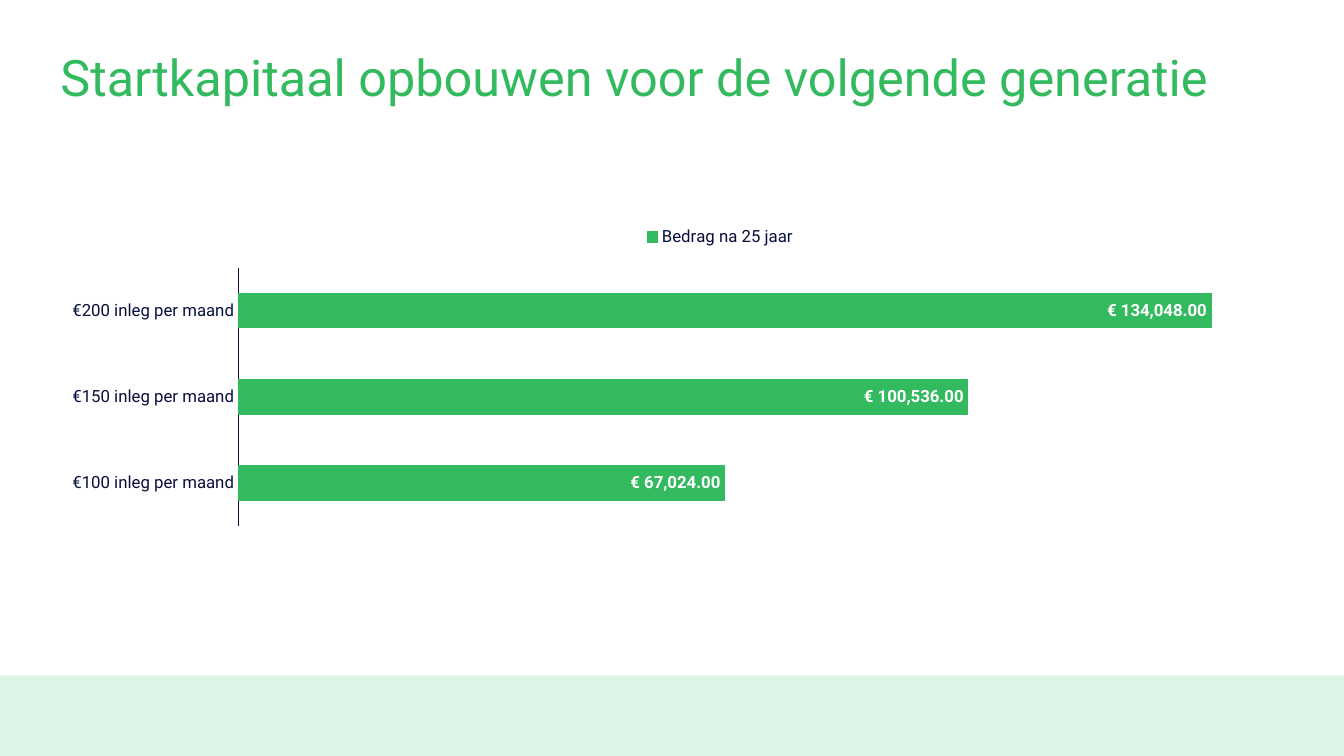
from lxml.etree import SubElement
from pptx import Presentation
from pptx.chart.data import CategoryChartData
from pptx.dml.color import RGBColor
from pptx.enum.chart import XL_CHART_TYPE, XL_LABEL_POSITION, XL_LEGEND_POSITION, XL_TICK_MARK
from pptx.enum.shapes import MSO_SHAPE
from pptx.enum.text import MSO_ANCHOR, MSO_AUTO_SIZE, PP_ALIGN
from pptx.oxml.ns import qn
from pptx.util import Inches, Pt

GREEN = RGBColor(0x33, 0xBA, 0x5F)
PALE_GREEN = RGBColor(0xDD, 0xF3, 0xE5)
NAVY = RGBColor(0x09, 0x0F, 0x3D)
WHITE = RGBColor(0xFF, 0xFF, 0xFF)
FONT = "Roboto"


def format_font(font, size, color, bold=False):
    font.name = FONT
    font.size = Pt(size)
    font.color.rgb = color
    font.bold = bold


def write_text(frame, text, size, color, bold=False, line_spacing=1.0, align=PP_ALIGN.LEFT):
    para = frame.paragraphs[0]
    para.alignment = align
    para.line_spacing = line_spacing
    span = para.add_run()
    span.text = text
    format_font(span.font, size, color, bold)


def place_plot(chart, x, y, w, h):
    """Fix the inner plot area, in fractions of the chart's size."""
    plot_area = chart._chartSpace.chart.plotArea
    for old_layout in plot_area.findall(qn("c:layout")):
        plot_area.remove(old_layout)
    layout = SubElement(plot_area, qn("c:layout"))
    plot_area.insert(0, layout)
    manual = SubElement(layout, qn("c:manualLayout"))
    settings = {"layoutTarget": "inner", "xMode": "edge", "yMode": "edge",
                "x": x, "y": y, "w": w, "h": h}
    for name, value in settings.items():
        SubElement(manual, qn(f"c:{name}")).set("val", str(value))


class SlideBuilder:
    """Adds elements in the house style to one slide."""

    def __init__(self, deck):
        self.slide = deck.slides.add_slide(deck.slide_layouts[5])

    def band(self, left, top, width, height, color):
        box = self.slide.shapes.add_shape(
            MSO_SHAPE.RECTANGLE, Inches(left), Inches(top), Inches(width), Inches(height))
        box.shadow.inherit = False
        box.fill.solid()
        box.fill.fore_color.rgb = color
        box.line.fill.background()

    def title(self, text, left, top, width, height):
        box = self.slide.shapes.title
        box.left, box.top = Inches(left), Inches(top)
        box.width, box.height = Inches(width), Inches(height)
        frame = box.text_frame
        frame.margin_left = frame.margin_right = frame.margin_top = frame.margin_bottom = 0
        frame.word_wrap = True
        frame.auto_size = MSO_AUTO_SIZE.NONE
        frame.vertical_anchor = MSO_ANCHOR.MIDDLE
        write_text(frame, text, 36, GREEN, line_spacing=0.9)

    def bar_chart(self, series_name, amounts, left, top, width, height):
        data = CategoryChartData()
        data.categories = list(amounts)
        data.add_series(series_name, list(amounts.values()))
        chart = self.slide.shapes.add_chart(
            XL_CHART_TYPE.BAR_CLUSTERED, Inches(left), Inches(top),
            Inches(width), Inches(height), data).chart
        format_font(chart.font, 10, NAVY)
        chart.has_title = False
        place_plot(chart, 0.145, 0.16, 0.855, 0.793)

        chart.has_legend = True
        chart.legend.position = XL_LEGEND_POSITION.TOP
        chart.legend.include_in_layout = False
        format_font(chart.legend.font, 12, NAVY)

        categories = chart.category_axis
        categories.major_tick_mark = categories.minor_tick_mark = XL_TICK_MARK.NONE
        categories.has_major_gridlines = False
        categories.format.line.color.rgb = NAVY
        categories.format.line.width = Pt(0.75)
        format_font(categories.tick_labels.font, 12, NAVY)

        values = chart.value_axis
        values.minimum_scale, values.maximum_scale = 0, 160000
        values.has_major_gridlines = False
        values.visible = False

        plot = chart.plots[0]
        plot.gap_width, plot.overlap = 150, -25
        plot.vary_by_categories = False
        series = plot.series[0]
        series.format.fill.solid()
        series.format.fill.fore_color.rgb = GREEN
        series.format.line.color.rgb = GREEN
        series.format.line.width = Pt(0.75)
        labels = series.data_labels
        labels.show_value = True
        labels.position = XL_LABEL_POSITION.INSIDE_END
        labels.number_format = r"[$€-413]\ #,##0.00"
        labels.number_format_is_linked = False
        format_font(labels.font, 12, WHITE, bold=True)


def main():
    deck = Presentation()
    deck.slide_width, deck.slide_height = Inches(13.33), Inches(7.5)
    page = SlideBuilder(deck)
    page.band(0, 6.7, 13.33, 0.8, PALE_GREEN)
    page.title("Startkapitaal opbouwen voor de volgende generatie", 0.6, 0.52, 12.13, 0.55)
    amounts = {
        "€100 inleg per maand": 67024,
        "€150 inleg per maand": 100536,
        "€200 inleg per maand": 134048,
    }
    page.bar_chart("Bedrag na 25 jaar", amounts, 0.41, 2.14, 13.47, 3.23)
    deck.save("out.pptx")


if __name__ == "__main__":
    main()
